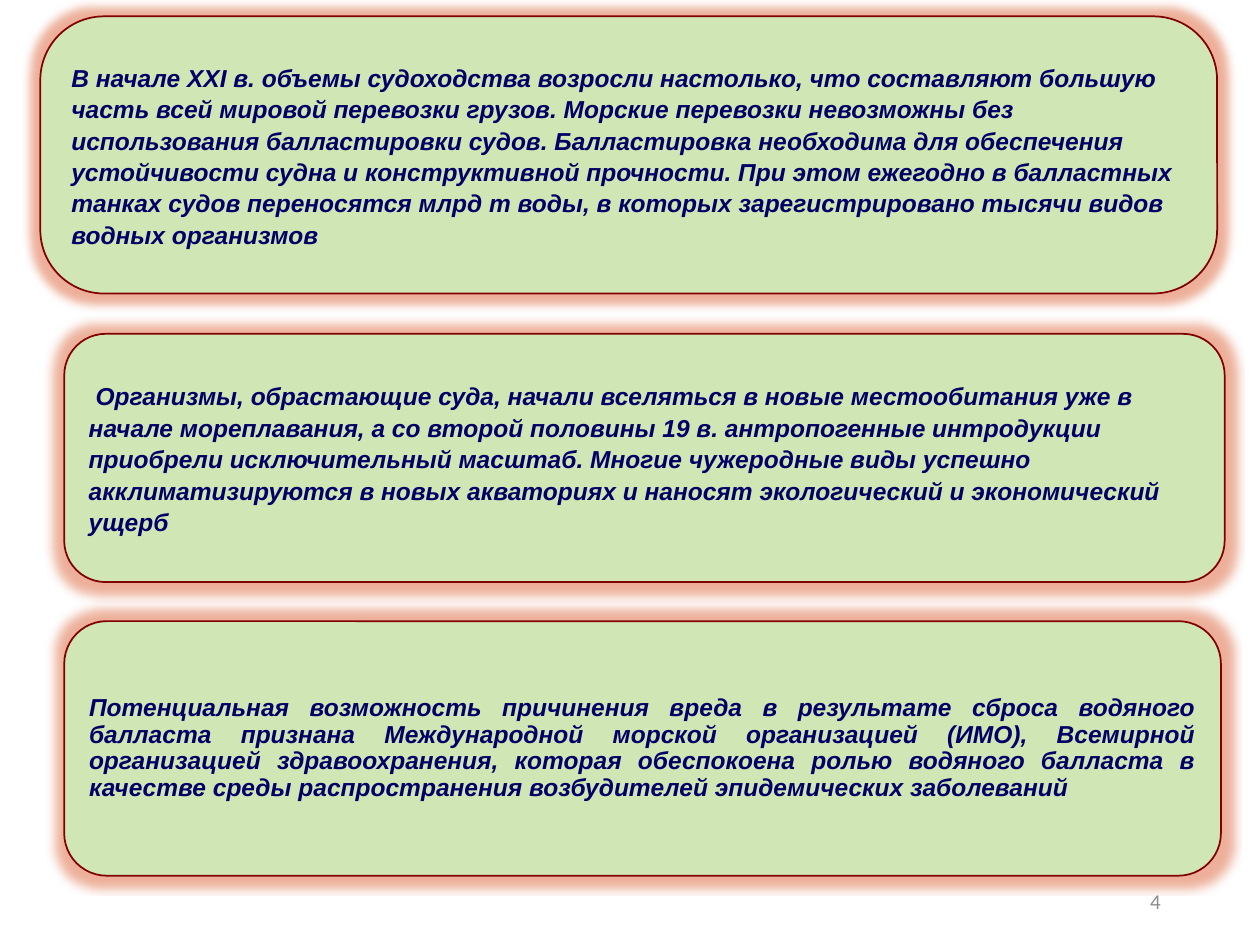
from lxml.etree import SubElement
from pptx import Presentation
from pptx.dml.color import RGBColor
from pptx.enum.shapes import MSO_SHAPE
from pptx.enum.text import MSO_ANCHOR, PP_ALIGN
from pptx.oxml.ns import qn
from pptx.util import Inches, Pt

GREEN = RGBColor(0xD1, 0xE6, 0xB5)
MAROON = RGBColor(0x80, 0x00, 0x00)
NAVY = RGBColor(0x00, 0x00, 0x66)
GREY = RGBColor(0x8C, 0x8C, 0x8C)
GLOW = RGBColor(0xD2, 0x39, 0x02)

SHIPPING = (
    "В начале XXI в. объемы судоходства возросли настолько, что составляют "
    "большую часть всей мировой перевозки грузов. Морские перевозки невозможны "
    "без использования балластировки судов. Балластировка необходима для "
    "обеспечения устойчивости судна и конструктивной прочности. При этом "
    "ежегодно в балластных танках судов переносятся млрд т воды, в которых "
    "зарегистрировано тысячи видов водных организмов"
)
ORGANISMS = (
    " Организмы, обрастающие суда, начали вселяться в новые местообитания уже в "
    "начале мореплавания, а со второй половины 19 в. антропогенные интродукции "
    "приобрели исключительный масштаб. Многие чужеродные виды успешно "
    "акклиматизируются в новых акваториях и наносят экологический и "
    "экономический ущерб"
)
HARM = (
    "Потенциальная возможность причинения вреда в результате сброса водяного "
    "балласта признана Международной морской организацией (ИМО), Всемирной "
    "организацией здравоохранения, которая обеспокоена ролью водяного балласта в "
    "качестве среды распространения возбудителей эпидемических заболеваний"
)


def write_text(sp, text, size=14, font="Arial", color=NAVY, bold=True,
               italic=True, align=PP_ALIGN.LEFT, spacing=1.07, before=0):
    """Write one formatted paragraph into a shape."""
    tf = sp.text_frame
    tf.word_wrap = True
    tf.vertical_anchor = MSO_ANCHOR.MIDDLE
    p = tf.paragraphs[0]
    p.alignment = align
    p.line_spacing = spacing
    p.space_before = Pt(before)
    r = p.add_run()
    r.text = text
    r.font.size = Pt(size)
    r.font.name = font
    r.font.color.rgb = color
    r.font.bold = bold
    r.font.italic = italic


def add_glow(sp, radius=11, opacity=40):
    """Give a shape a soft coloured glow."""
    sp.shadow.inherit = False
    effects = sp.element.spPr.find(qn("a:effectLst"))
    glow = SubElement(effects, qn("a:glow"), rad=str(Pt(radius)))
    color = SubElement(glow, qn("a:srgbClr"), val=str(GLOW))
    SubElement(color, qn("a:alpha"), val=str(opacity * 1000))


def add_panel(s, left, top, width, height, text, corner=0.167, **text_format):
    """Add a glowing rounded panel with text."""
    sp = s.shapes.add_shape(MSO_SHAPE.ROUNDED_RECTANGLE, Inches(left),
                            Inches(top), Inches(width), Inches(height))
    sp.adjustments[0] = corner
    sp.fill.solid()
    sp.fill.fore_color.rgb = GREEN
    sp.line.color.rgb = MAROON
    sp.line.width = Pt(1)
    add_glow(sp)
    write_text(sp, text, **text_format)


def add_page_number(s, number):
    """Add the page number at the lower right."""
    sp = s.shapes.add_textbox(Inches(7.06), Inches(6.95), Inches(2.25), Inches(0.4))
    write_text(sp, number, size=12, font="Calibri", color=GREY, bold=False,
               italic=False, align=PP_ALIGN.RIGHT, spacing=1.0)


def main():
    """Build and save the slide."""
    prs = Presentation()
    prs.slide_width, prs.slide_height = Inches(10), Inches(7.5)
    s = prs.slides.add_slide(prs.slide_layouts[6])
    add_page_number(s, "4")
    add_panel(s, 0.32, 0.13, 9.34, 2.2, SHIPPING, corner=0.23)
    add_panel(s, 0.51, 2.65, 9.21, 1.97, ORGANISMS)
    add_panel(s, 0.51, 4.93, 9.18, 2.02, HARM, align=PP_ALIGN.JUSTIFY,
              spacing=0.9, before=10)
    prs.save("out.pptx")


if __name__ == "__main__":
    main()
